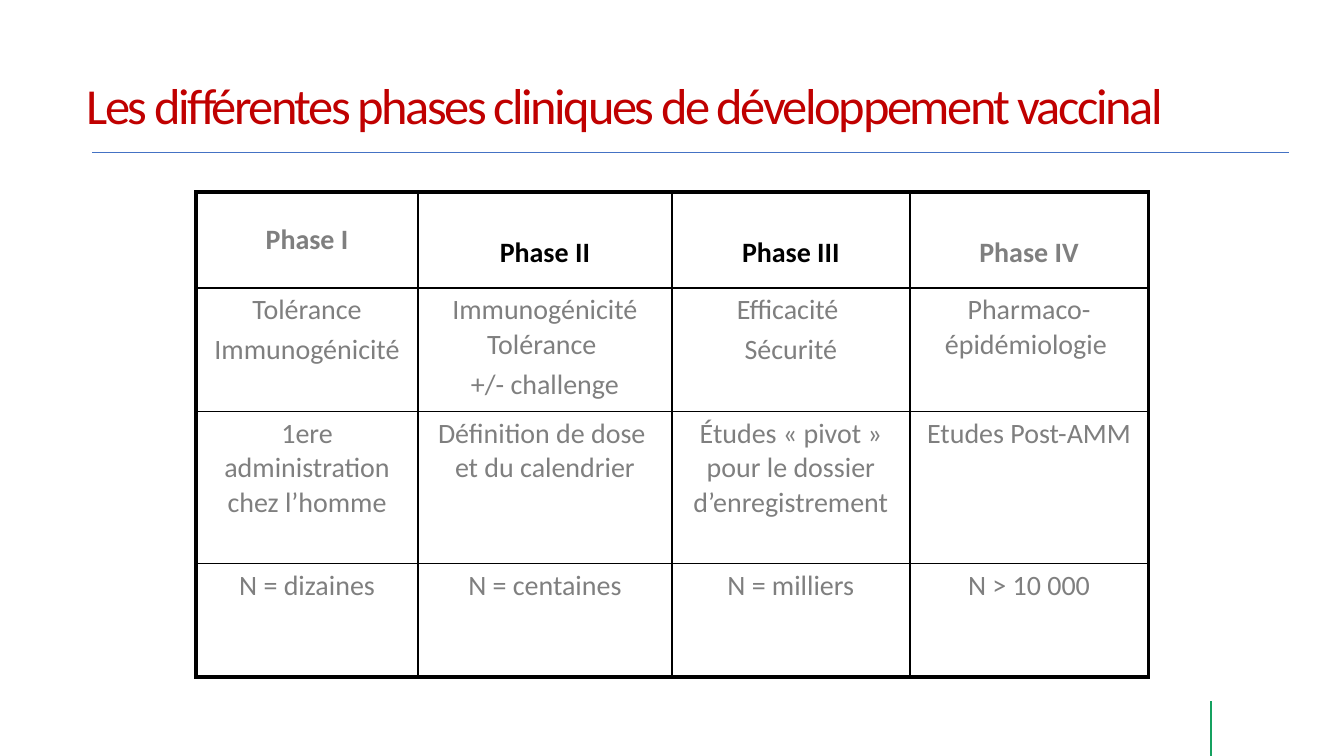
from pptx import Presentation
from pptx.dml.color import RGBColor as RGB
from pptx.enum.shapes import MSO_CONNECTOR as Link
from pptx.enum.text import MSO_ANCHOR as Anchor, PP_ALIGN as Align
from pptx.oxml.ns import qn
from pptx.util import Inches, Pt
from lxml.etree import SubElement as Sub

HUES = {"title": "C00000", "rule": "4472C4", "tick": "15A160",
        "grey": "7F7F7F", "black": "000000"}
FONT = "Calibri"

deck = Presentation()
deck.slide_width = Inches(10)
deck.slide_height = deck.slide_width * 9 // 16
unit = deck.slide_width / 100  # grid step: one hundredth of the width
slide = deck.slides.add_slide(deck.slide_layouts[6])


def grid(*steps):
    return [round(s * unit) for s in steps]


def style(para, size, hue, bold=False):
    for run in para.runs:
        run.font.name, run.font.size, run.font.bold = FONT, Pt(size), bold
        run.font.color.rgb = RGB.from_string(HUES[hue])


# Green tick at the foot, blue rule under the title
for ends, hue, width in [((90.1, 56.25, 90.1, 52.15), "tick", 1),
                         ((6.87, 11.34, 95.9, 11.34), "rule", 0.5)]:
    line = slide.shapes.add_connector(Link.STRAIGHT, *grid(*ends))
    line.line.color.rgb = RGB.from_string(HUES[hue])
    line.line.width = Pt(width)
    Sub(line._element.spPr, qn("a:effectLst"))

# Title
frame = slide.shapes.add_textbox(*grid(5.45, 3.3, 90.2, 9.5)).text_frame
frame.word_wrap = True
frame.vertical_anchor = Anchor.MIDDLE
para = frame.paragraphs[0]
para.text = "Les différentes phases cliniques de développement vaccinal"
para.line_spacing = 0.9
style(para, 27, "title")
para.runs[0].font._element.set("spc", "-130")

# Table of phases
rows = [
    ["Phase I", "Phase II", "Phase III", "Phase IV"],
    ["Tolérance\nImmunogénicité", "Immunogénicité Tolérance \n+/- challenge",
     "Efficacité \nSécurité", "Pharmaco-épidémiologie "],
    ["1ere administration chez l’homme", "Définition de dose \vet du calendrier",
     "Études « pivot » pour le dossier d’enregistrement", "Etudes Post-AMM"],
    ["N = dizaines", "N = centaines", "N = milliers", "N > 10 000"],
]
wide = [16.5, 18.9, 17.7, 17.75]
high = [7.15, 9.2, 11.3, 8.45]
last = len(rows) - 1
table = slide.shapes.add_table(
    len(high), len(wide), *grid(14.6, 14.27, sum(wide), sum(high))).table
table.first_row = table.horz_banding = False
for col, size in zip(table.columns, grid(*wide)):
    col.width = size
for row, size in zip(table.rows, grid(*high)):
    row.height = size

for r, row in enumerate(rows):
    for c, text in enumerate(row):
        cell = table.cell(r, c)
        cell.text_frame.text = text
        cell.margin_left, cell.margin_right = grid(0.7, 0.7)
        # Later headings sit one line lower than the first
        low = r == 0 and c > 0
        cell.margin_top, cell.margin_bottom = grid(3.3 if low else 0.4, 0.4)
        cell.vertical_anchor = Anchor.MIDDLE if r == c == 0 else Anchor.TOP
        hue = "black" if r == 0 and c in (1, 2) else "grey"
        for n, para in enumerate(cell.text_frame.paragraphs):
            para.alignment = Align.CENTER
            para.space_before = Pt(3 if n else 0)
            style(para, 15, hue, r == 0)

        # Borders: thick round the outside, thin within
        props = cell._tc.get_or_add_tcPr()
        for side, outer in [("L", c == 0), ("R", c == last),
                            ("T", r == 0), ("B", r == last)]:
            edge = Sub(props, qn(f"a:ln{side}"), w=str(Pt(2.25 if outer else 1)))
            Sub(Sub(edge, qn("a:solidFill")), qn("a:srgbClr"), val=HUES["black"])
        cell.fill.background()

deck.save("out.pptx")
